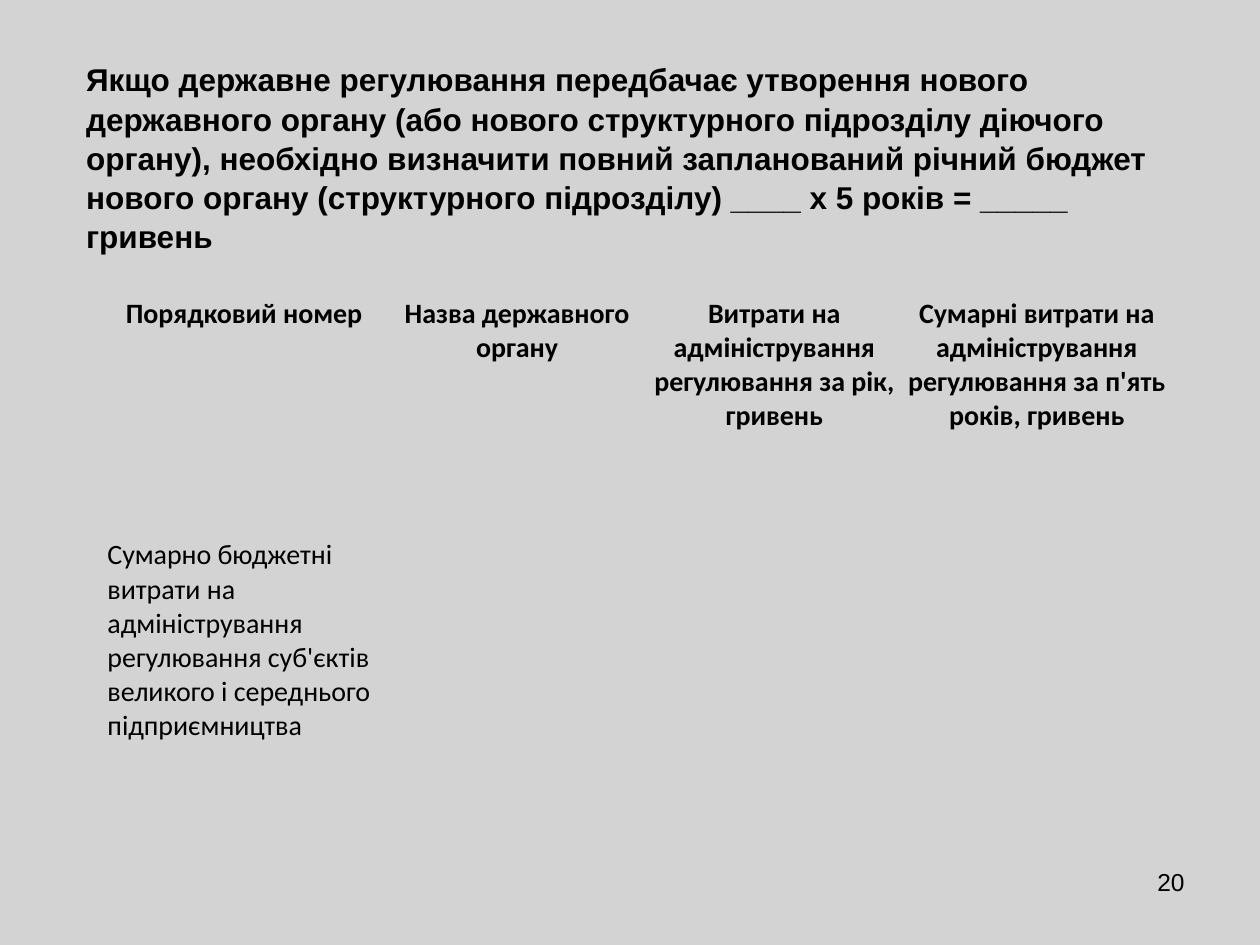
import pptx
import pptx.util
import pptx.dml.color
import pptx.enum.text

RGB = pptx.dml.color.RGBColor
ALIGN = pptx.enum.text.PP_ALIGN
BLACK = RGB(0x00, 0x00, 0x00)
GREY = RGB(0xD3, 0xD3, 0xD3)
PLAIN = "{2D5ABB26-0587-4C30-8999-92F81FD0307C}"  # no style, no grid
UNIT = pptx.util.Inches(1) / 12  # grid of 120 columns by 90 rows

TITLE = ("Якщо державне регулювання передбачає утворення нового державного "
         "органу (або нового структурного підрозділу діючого органу), необхідно "
         "визначити повний запланований річний бюджет нового органу "
         "(структурного підрозділу) ____ х 5 років = _____ гривень")
ROWS = [
    ["Порядковий номер", "Назва державного органу",
     "Витрати на адміністрування регулювання за рік, гривень",
     "Сумарні витрати на адміністрування регулювання за п'ять років, гривень"],
    ["", "", "", ""],
    ["Сумарно бюджетні витрати на адміністрування регулювання суб'єктів "
     "великого і середнього підприємництва", "", "", ""],
]


def grid(*cells):
    return [round(c * UNIT) for c in cells]


def write(frame, text, size=16, font="Calibri", bold=False, align=ALIGN.LEFT,
          space=1.0):
    frame.word_wrap = True
    para = frame.paragraphs[0]
    para.alignment = align
    para.line_spacing = space
    run = para.add_run()
    run.text = text
    face = run.font
    face.size = pptx.util.Pt(size)
    face.name = font
    face.bold = bold
    face.color.rgb = BLACK


class Deck:
    """Holds the style and the current slide."""

    def __init__(self, font, fill):
        self.font = font
        self.prs = pptx.Presentation()
        self.prs.slide_width, self.prs.slide_height = grid(120, 90)
        self.slide = self.prs.slides.add_slide(self.prs.slide_layouts[5])
        back = self.slide.background.fill
        back.solid()
        back.fore_color.rgb = fill

    def title(self, text, box):
        shape = self.slide.shapes.title
        shape.left, shape.top, shape.width, shape.height = grid(*box)
        frame = shape.text_frame
        frame.auto_size = pptx.enum.text.MSO_AUTO_SIZE.NONE
        frame.vertical_anchor = pptx.enum.text.MSO_ANCHOR.TOP
        write(frame, text, size=18, font=self.font, bold=True, space=1.04)

    def label(self, text, box, **form):
        shape = self.slide.shapes.add_textbox(*grid(*box))
        write(shape.text_frame, text, font=self.font, **form)

    def table(self, rows, box, wide, high):
        frame = self.slide.shapes.add_table(len(rows), len(wide), *grid(*box))
        table = frame.table
        table.first_row = table.horz_banding = False
        table._tbl.tblPr.find(pptx.oxml.ns.qn("a:tableStyleId")).text = PLAIN
        for col, width in zip(table.columns, grid(*wide)):
            col.width = width
        for row, height in zip(table.rows, grid(*high)):
            row.height = height
        inset = pptx.util.Inches(0.02)
        for r, texts in enumerate(rows):
            for c, text in enumerate(texts):
                cell = table.cell(r, c)
                cell.fill.background()
                cell.margin_left = cell.margin_right = inset
                cell.margin_top = cell.margin_bottom = inset
                if text:
                    head = r == 0
                    write(cell.text_frame, text, bold=head,
                          align=ALIGN.CENTER if head else ALIGN.LEFT)


def main():
    deck = Deck("Arial", GREY)
    deck.title(TITLE, (7, 5, 106, 19.5))
    deck.table(ROWS, (10, 28, 102, 43), (26.5, 25.5, 23.5, 26.5), (13.5, 9.5, 20))
    deck.label("20", (86, 82, 28, 6.25), size=14, align=ALIGN.RIGHT)
    deck.prs.save("out.pptx")


if __name__ == "__main__":
    main()
